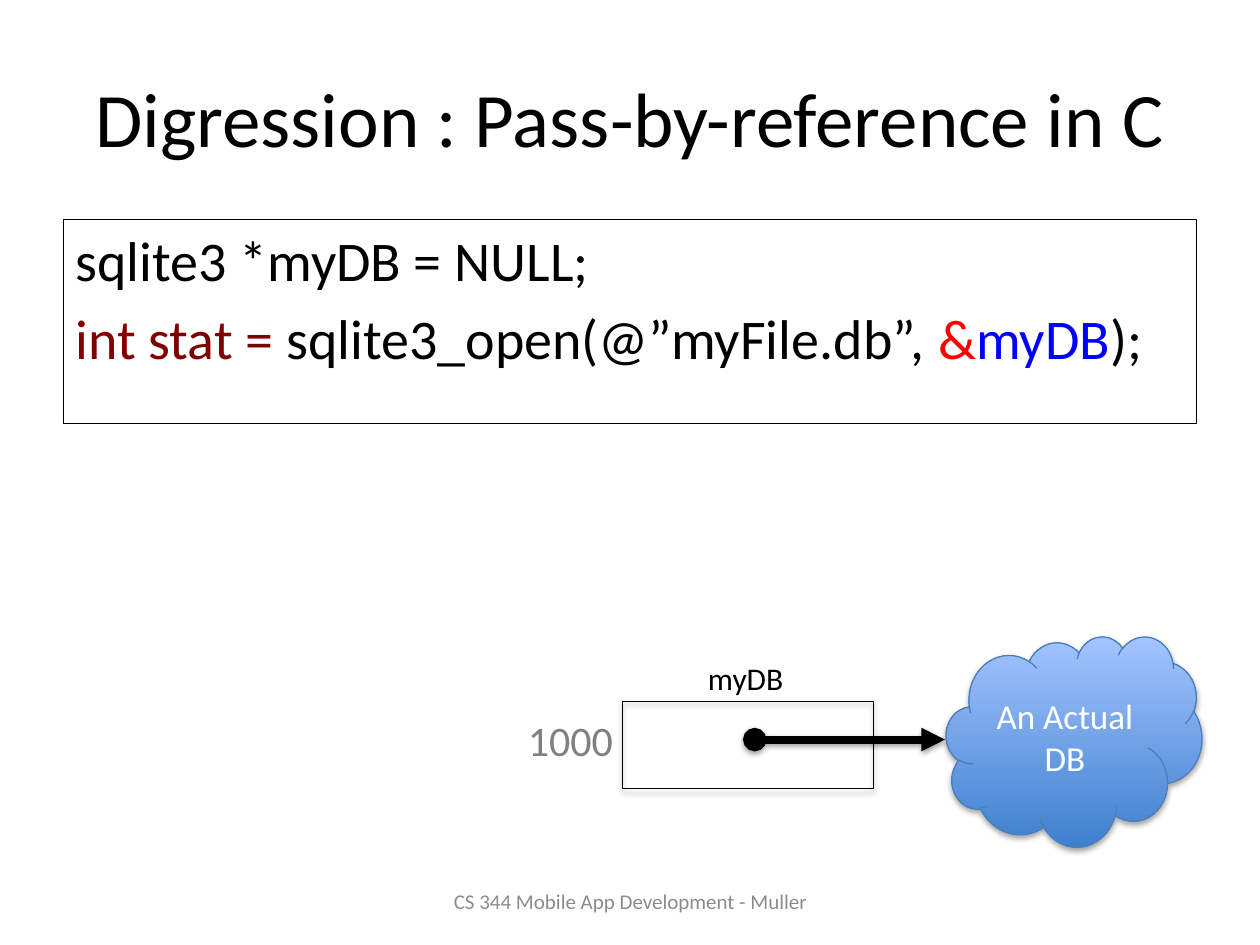
from pptx import Presentation
from pptx.dml.color import RGBColor as RGB
from pptx.enum.shapes import MSO_CONNECTOR as Conn, MSO_SHAPE as Shape
from pptx.enum.text import MSO_ANCHOR as Anchor, PP_ALIGN as Align
from pptx.oxml.ns import qn
from pptx.util import Inches, Pt
from lxml import etree

BLACK = RGB(0x00, 0x00, 0x00)
WHITE = RGB(0xFF, 0xFF, 0xFF)
GRAY = RGB(0x80, 0x80, 0x80)
PALE = RGB(0x8C, 0x8C, 0x8C)
MAROON = RGB(0x80, 0x00, 0x00)
RED = RGB(0xFF, 0x00, 0x00)
BLUE = RGB(0x00, 0x00, 0xFF)
DEEP = RGB(0x3F, 0x80, 0xCE)
SKY = RGB(0xA4, 0xC4, 0xFF)
EDGE = RGB(0x4B, 0x7E, 0xBC)


class Deck:
    font = "Calibri"

    def __init__(self, slide):
        self.slide = slide
        self.shapes = slide.shapes

    def place(self, shape, box):
        shape.left, shape.top, shape.width, shape.height = map(Inches, box)

    def style(self, para, size, color=None, align=Align.LEFT):
        para.alignment = align
        para.font.name = self.font
        para.font.size = Pt(size)
        if color is not None:
            para.font.color.rgb = color

    def edge(self, shape, color, width):
        shape.line.color.rgb = color
        shape.line.width = Pt(width)

    def words(self, shape, text, size, color, align):
        shape.text_frame.text = text
        for para in shape.text_frame.paragraphs:
            self.style(para, size, color, align)

    def title(self, text, box):
        shape = self.shapes.title
        self.place(shape, box)
        self.words(shape, text, 44, BLACK, Align.CENTER)
        shape.text_frame.vertical_anchor = Anchor.MIDDLE

    def label(self, text, box, size, color, align=Align.LEFT,
              anchor=Anchor.TOP, wrap=False):
        shape = self.shapes.add_textbox(*map(Inches, box))
        self.words(shape, text, size, color, align)
        shape.text_frame.vertical_anchor = anchor
        shape.text_frame.word_wrap = wrap

    def code(self, lines, box, size):
        shape = self.shapes.add_textbox(*map(Inches, box))
        self.edge(shape, BLACK, 0.5)
        frame = shape.text_frame
        frame.word_wrap = True
        for i, line in enumerate(lines):
            para = frame.add_paragraph() if i else frame.paragraphs[0]
            self.style(para, size)
            para.space_before = Pt(size * 0.2)
            props = para._p.get_or_add_pPr()
            props.set("marL", str(Inches(0.38)))
            props.set("indent", str(-Inches(0.38)))
            for text, color in line:
                run = para.add_run()
                run.text = text
                run.font.color.rgb = color

    def cell(self, box):
        shape = self.shapes.add_shape(Shape.RECTANGLE, *map(Inches, box))
        shape.fill.background()
        self.edge(shape, BLACK, 0.75)

    def cloud(self, text, box):
        shape = self.shapes.add_shape(Shape.CLOUD, *map(Inches, box))
        shape.fill.gradient()
        shape.fill.gradient_angle = 90
        for stop, color in zip(shape.fill.gradient_stops, (DEEP, SKY)):
            stop.color.rgb = color
        self.edge(shape, EDGE, 0.75)
        self.words(shape, text, 20, WHITE, Align.CENTER)
        shape.text_frame.vertical_anchor = Anchor.MIDDLE

    def arrow(self, start, end):
        line = self.shapes.add_connector(
            Conn.STRAIGHT, *map(Inches, start + end))
        self.edge(line, BLACK, 4.5)
        stroke = line.element.spPr.find(qn("a:ln"))
        for tag, kind in (("a:headEnd", "oval"), ("a:tailEnd", "triangle")):
            etree.SubElement(stroke, qn(tag)).set("type", kind)


def main():
    prs = Presentation()
    prs.slide_width, prs.slide_height = Inches(10), Inches(7.5)
    deck = Deck(prs.slides.add_slide(prs.slide_layouts[5]))
    deck.title("Digression : Pass-by-reference in C", (0.5, 0.3, 9, 1.25))
    deck.code([
        [("sqlite3 *myDB = NULL;", BLACK)],
        [("int stat = ", MAROON), ("sqlite3_open(@”myFile.db”, ", BLACK),
         ("&", RED), ("myDB", BLUE), (");", BLACK)],
    ], (0.5, 1.74, 9, 1.62), 32)
    deck.label("CS 344 Mobile App Development - Muller",
               (3.42, 6.95, 3.17, 0.4), 12, PALE,
               Align.CENTER, Anchor.MIDDLE, True)
    deck.cell((4.94, 5.57, 1.99, 0.69))
    deck.label("myDB", (5.52, 5.18, 0.81, 0.4), 18, BLACK)
    deck.label("1000", (4.09, 5.62, 0.88, 0.5), 24, GRAY)
    deck.arrow((5.99, 5.87), (7.5, 5.87))
    deck.cloud("An Actual\nDB", (7.51, 5.05, 2.03, 1.67))
    prs.save("out.pptx")


if __name__ == "__main__":
    main()
